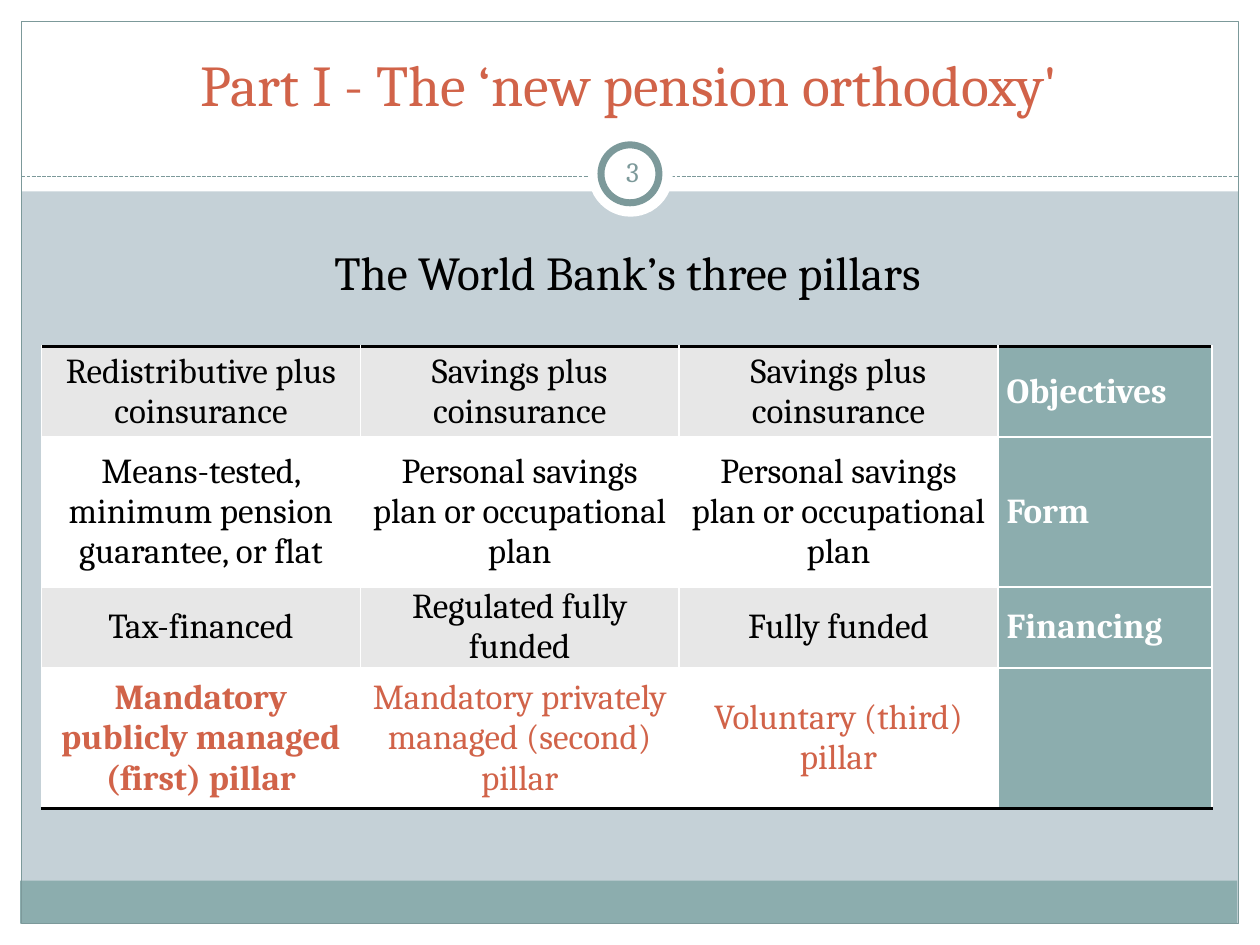
"""Build the slide on the three pension pillars."""

from dataclasses import dataclass
from typing import Any, Optional

from lxml.etree import SubElement
from pptx import Presentation
from pptx.dml.color import RGBColor
from pptx.enum.dml import MSO_LINE
from pptx.enum.shapes import MSO_CONNECTOR, MSO_SHAPE
from pptx.enum.text import MSO_ANCHOR, MSO_AUTO_SIZE, PP_ALIGN
from pptx.oxml.ns import qn
from pptx.util import Inches, Pt

WHITE, BLACK, GREY = "FFFFFF", "000000", "E7E7E7"
TEAL, DARK_TEAL, ORANGE = "8CADAE", "7C999A", "D16349"
BACKGROUND = "C5D1D7"


@dataclass
class Panel:
    left: float
    top: float
    width: float
    height: float
    fill: Optional[str] = WHITE
    line: Optional[str] = None
    line_width: float = 0.75
    kind: MSO_SHAPE = MSO_SHAPE.RECTANGLE


@dataclass
class TextStyle:
    size: float
    color: str
    bold: bool = False
    alignment: PP_ALIGN = PP_ALIGN.CENTER


PANELS = [
    Panel(0, 7.33, 10, 0.17),
    Panel(0, 0, 10, 1.52),
    Panel(0, 0, 0.17, 7.5),
    Panel(9.83, 0, 0.17, 7.5),
    Panel(0.16, 6.99, 9.66, 0.34, TEAL),
    Panel(0.17, 0.17, 9.66, 7.16, None, DARK_TEAL),
]
BADGE = [
    Panel(4.67, 1.05, 0.67, 0.67, kind=MSO_SHAPE.OVAL),
    Panel(4.77, 1.15, 0.46, 0.46, WHITE, DARK_TEAL, 4, MSO_SHAPE.OVAL),
]
COLUMN_WIDTHS = [2.53, 2.53, 2.53, 1.7]
ROW_HEIGHTS = [0.72, 1.19, 0.58, 1.12]
ROWS = [
    ["Redistributive plus coinsurance", "Savings plus coinsurance",
     "Savings plus coinsurance", "Objectives"],
    ["Means-tested, minimum pension guarantee, or flat",
     "Personal savings plan or occupational plan",
     "Personal savings plan or occupational plan", "Form"],
    ["Tax-financed", "Regulated fully funded", "Fully funded", "Financing"],
    ["Mandatory publicly managed (first) pillar",
     "Mandatory privately managed (second) pillar",
     "Voluntary (third) pillar", ""],
]


def rgb(color: str) -> RGBColor:
    """Turn a hex string into a colour."""
    return RGBColor.from_string(color)


def set_attributes(target: Any, values: dict) -> None:
    """Set every named attribute on the target."""
    for name, value in values.items():
        setattr(target, name, value)


def place(shape: Any, left: float, top: float, width: float, height: float) -> None:
    """Move and size a shape in inches."""
    names = ("left", "top", "width", "height")
    set_attributes(shape, dict(zip(names, map(Inches, (left, top, width, height)))))


def write(text_frame: Any, text: str, style: TextStyle) -> Any:
    """Write one styled paragraph and return it."""
    paragraph = text_frame.paragraphs[0]
    paragraph.alignment = style.alignment
    run = paragraph.add_run()
    run.text = text
    set_attributes(run.font, {"name": "Cambria", "size": Pt(style.size), "bold": style.bold})
    run.font.color.rgb = rgb(style.color)
    return paragraph


def draw_panel(slide: Any, panel: Panel) -> None:
    """Draw one plain shape."""
    shape = slide.shapes.add_shape(
        panel.kind, *map(Inches, (panel.left, panel.top, panel.width, panel.height)))
    shape.shadow.inherit = False
    if panel.fill:
        shape.fill.solid()
        shape.fill.fore_color.rgb = rgb(panel.fill)
    else:
        shape.fill.background()
    if panel.line:
        shape.line.color.rgb = rgb(panel.line)
        shape.line.width = Pt(panel.line_width)
    else:
        shape.line.fill.background()


def draw_divider(slide: Any) -> None:
    """Draw the dashed line below the title."""
    connector = slide.shapes.add_connector(
        MSO_CONNECTOR.STRAIGHT, *map(Inches, (0.17, 1.4, 9.83, 1.4)))
    connector.line.color.rgb = rgb(DARK_TEAL)
    set_attributes(connector.line, {"width": Pt(0.75), "dash_style": MSO_LINE.SQUARE_DOT})
    SubElement(connector.element.spPr, qn("a:effectLst"))


def draw_page_number(slide: Any) -> None:
    """Write the page number in the badge."""
    box = slide.shapes.add_textbox(*map(Inches, (4.77, 1.12, 0.5, 0.48)))
    margins = ("margin_left", "margin_top", "margin_right", "margin_bottom")
    set_attributes(box.text_frame, {
        "word_wrap": True, "vertical_anchor": MSO_ANCHOR.MIDDLE,
        **dict.fromkeys(margins, Inches(0.05))})
    write(box.text_frame, "3", TextStyle(16, DARK_TEAL))


def fill_placeholders(slide: Any) -> None:
    """Fill the title and body and bring them to the front."""
    title, body = slide.placeholders
    place(title, 0.33, 0.25, 9.33, 0.83)
    place(body, 0.33, 1.88, 9.3, 4.79)
    for placeholder, anchor in ((title, MSO_ANCHOR.MIDDLE), (body, MSO_ANCHOR.TOP)):
        set_attributes(placeholder.text_frame, {
            "word_wrap": True, "auto_size": MSO_AUTO_SIZE.NONE, "vertical_anchor": anchor})
        slide.shapes.element.append(placeholder.element)
    write(title.text_frame, "Part I - The ‘new pension orthodoxy'", TextStyle(33, ORANGE))
    paragraph = write(body.text_frame, "The World Bank’s three pillars", TextStyle(27, BLACK))
    paragraph.space_before = Pt(5.4)
    properties = paragraph._p.get_or_add_pPr()
    set_attributes(properties, {"marL": 0, "indent": 0})
    SubElement(properties, qn("a:buNone"))


def add_border(cell: Any, side: str) -> None:
    """Add a black border to one side, ahead of the cell fill."""
    properties = cell._tc.get_or_add_tcPr()
    line = SubElement(properties, qn(f"a:{side}"), w=str(Pt(2)))
    SubElement(SubElement(line, qn("a:solidFill")), qn("a:srgbClr"), val=BLACK)
    properties.insert(0, line)


def draw_table(slide: Any) -> None:
    """Draw the table of pillars."""
    table = slide.shapes.add_table(
        len(ROWS), len(COLUMN_WIDTHS), *map(Inches, (0.33, 2.75, 9.3, 3.69))).table
    set_attributes(table, {"first_row": False, "horz_banding": False})
    for column, width in zip(table.columns, COLUMN_WIDTHS):
        column.width = Inches(width)
    last_row, last_column = len(ROWS) - 1, len(COLUMN_WIDTHS) - 1
    for row_index, texts in enumerate(ROWS):
        table.rows[row_index].height = Inches(ROW_HEIGHTS[row_index])
        for column_index, text in enumerate(texts):
            cell = table.cell(row_index, column_index)
            set_attributes(cell, {
                "margin_left": Inches(0.07), "margin_right": Inches(0.07),
                "margin_top": 0, "margin_bottom": 0,
                "vertical_anchor": MSO_ANCHOR.MIDDLE})
            if column_index == last_column:
                fill, style = TEAL, TextStyle(20, WHITE, True, PP_ALIGN.LEFT)
            else:
                fill = WHITE if row_index % 2 else GREY
                is_pillar = row_index == last_row
                style = TextStyle(20, ORANGE if is_pillar else BLACK,
                                  is_pillar and column_index == 0)
            cell.fill.solid()
            cell.fill.fore_color.rgb = rgb(fill)
            if text:
                write(cell.text_frame, text, style)
            if row_index == 0:
                add_border(cell, "lnT")
            elif row_index == last_row:
                add_border(cell, "lnB")


def main() -> None:
    """Build and save the presentation."""
    presentation = Presentation()
    set_attributes(presentation, {"slide_width": Inches(10), "slide_height": Inches(7.5)})
    slide = presentation.slides.add_slide(presentation.slide_layouts[1])
    slide.background.fill.solid()
    slide.background.fill.fore_color.rgb = rgb(BACKGROUND)
    for panel in PANELS:
        draw_panel(slide, panel)
    draw_divider(slide)
    for panel in BADGE:
        draw_panel(slide, panel)
    draw_page_number(slide)
    fill_placeholders(slide)
    draw_table(slide)
    presentation.save("out.pptx")


if __name__ == "__main__":
    main()
